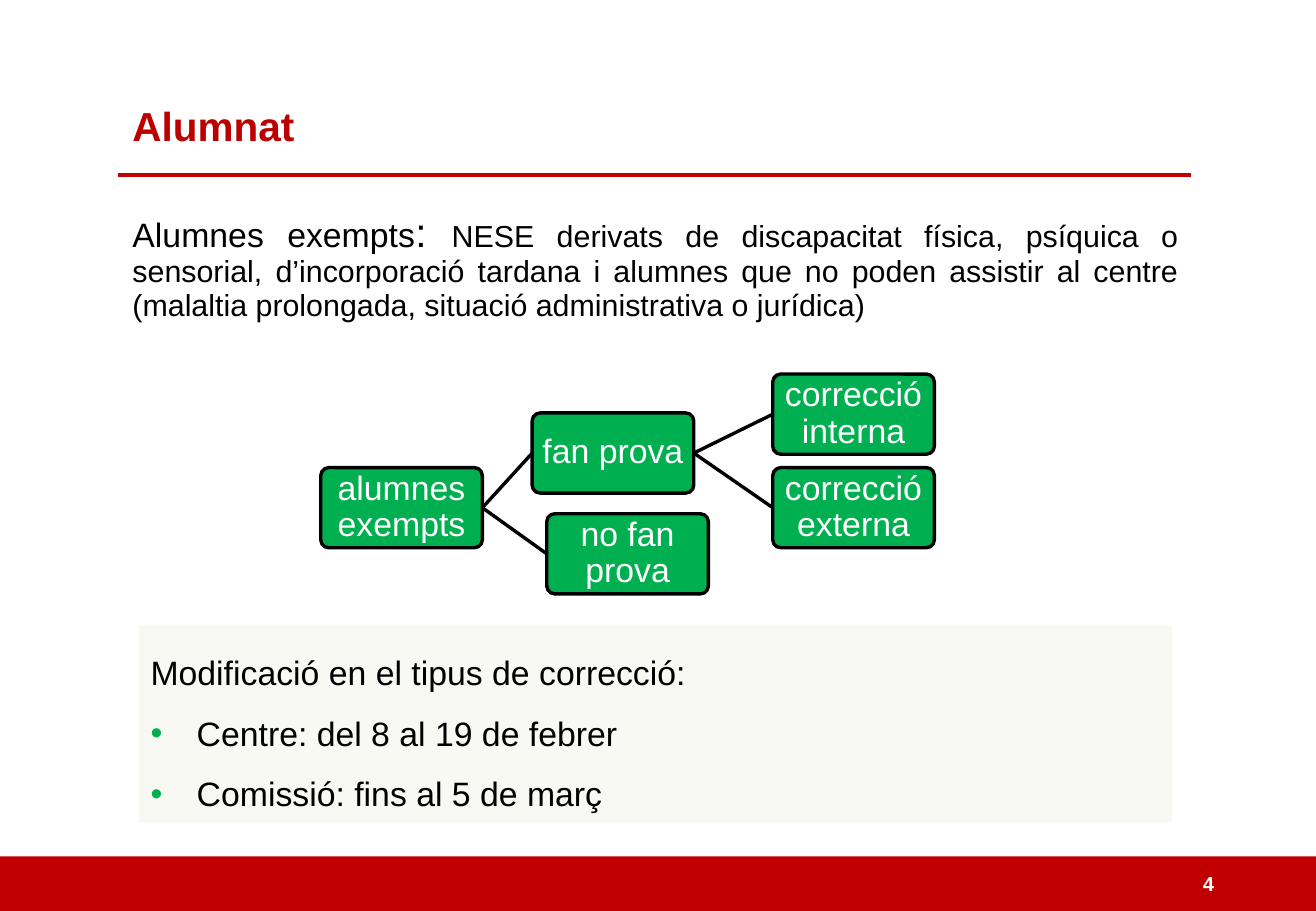
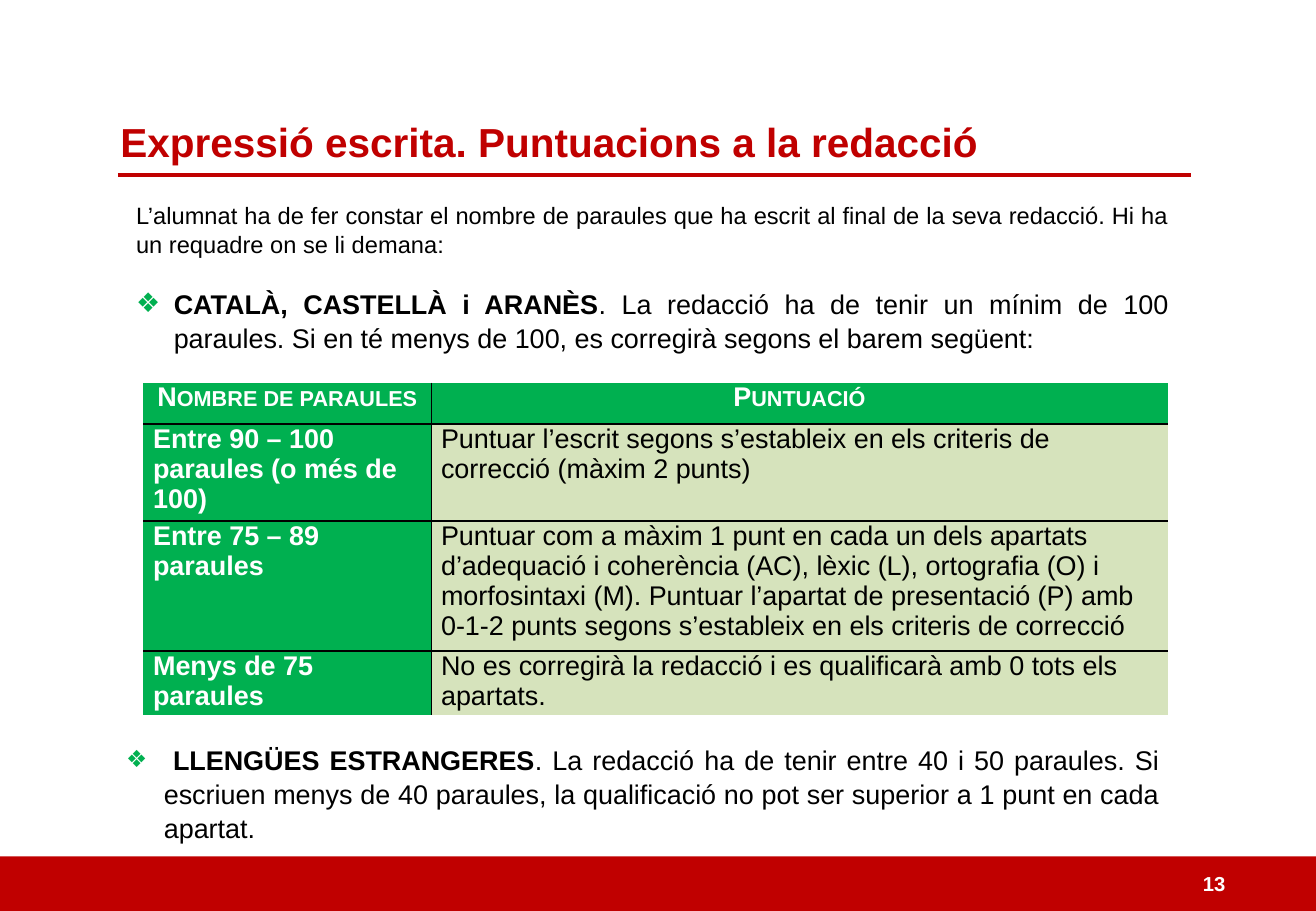
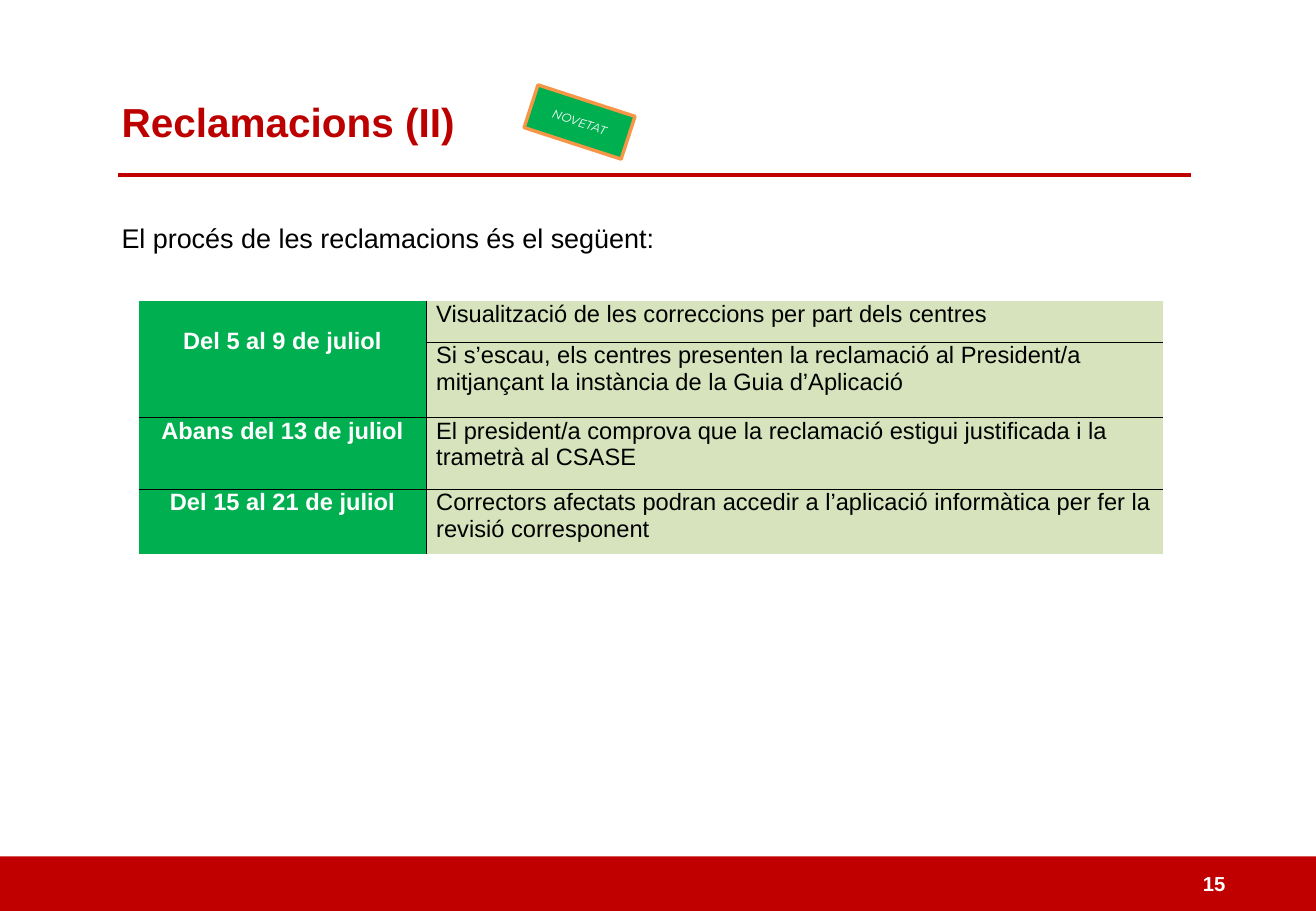
"""Build three slides on exempt pupils, essay scoring and claims."""
import pptx
import pptx.dml.color
import pptx.enum.shapes
import pptx.enum.text
import pptx.oxml.ns
import pptx.util
from lxml import etree

Inches = pptx.util.Inches
Pt = pptx.util.Pt
RGBColor = pptx.dml.color.RGBColor
ALIGN = pptx.enum.text.PP_ALIGN
ANCHOR = pptx.enum.text.MSO_ANCHOR
SHAPE = pptx.enum.shapes.MSO_SHAPE

RED = RGBColor(0xC0, 0x00, 0x00)
TITLE_RED = RGBColor(0xBC, 0x00, 0x00)
GREEN = RGBColor(0x00, 0xB0, 0x50)
PALE_GREEN = RGBColor(0xD6, 0xE3, 0xBC)
ORANGE = RGBColor(0xF7, 0x96, 0x46)
BLACK = RGBColor(0, 0, 0)
WHITE = RGBColor(255, 255, 255)
FONT = "Arial"
COLUMNS = (2.37, 6.06)


def add_xml(parent, tag, **attributes):
    """Append a DrawingML element and return it."""
    child = etree.SubElement(parent, pptx.oxml.ns.qn(tag))
    for name, value in attributes.items():
        child.set(name, str(value))
    return child


def place(box, left, top, width, height):
    """Set the position and size of a shape."""
    box.left, box.top = Inches(left), Inches(top)
    box.width, box.height = Inches(width), Inches(height)


def style_span(span, size, color=BLACK, bold=False, italic=False, font=FONT):
    """Format one run."""
    span.font.name = font
    span.font.size = Pt(size)
    span.font.color.rgb = color
    span.font.bold = bold
    span.font.italic = italic


def fill_para(para, spans, align=ALIGN.LEFT, spacing=1.0, before=0, bullet=None, indent=0.31):
    """Write (text, size, bold) spans with optional bullet."""
    para.alignment = align
    para.line_spacing = spacing
    para.space_before = Pt(before)
    properties = para._p.get_or_add_pPr()
    hang = Inches(indent) if bullet else 0
    properties.set("marL", str(hang))
    properties.set("indent", str(-hang))
    if bullet:
        add_xml(add_xml(properties, "a:buClr"), "a:srgbClr", val=GREEN)
        add_xml(properties, "a:buFont", typeface=FONT)
        add_xml(properties, "a:buChar", char=bullet)
    else:
        add_xml(properties, "a:buNone")
    for text, size, bold in spans:
        span = para.add_run()
        span.text = text
        style_span(span, size, bold=bold)


def set_frame(box, anchor=ANCHOR.TOP):
    """Give a box wrapped text of fixed size and return its frame."""
    frame = box.text_frame
    frame.word_wrap = True
    frame.auto_size = pptx.enum.text.MSO_AUTO_SIZE.NONE
    frame.vertical_anchor = anchor
    return frame


def label(box, text, size, color=WHITE, align=ALIGN.CENTER, anchor=ANCHOR.MIDDLE, **style):
    """Write a single-style label into a box."""
    frame = set_frame(box, anchor)
    frame.text = text
    frame.paragraphs[0].alignment = align
    style_span(frame.paragraphs[0].runs[0], size, color, **style)
    return frame


def add_block(page, kind, bounds, fill, line=None, weight=2):
    """Add a filled preset shape."""
    block = page.shapes.add_shape(kind, *map(Inches, bounds))
    block.shadow.inherit = False
    block.fill.solid()
    block.fill.fore_color.rgb = fill
    if line is None:
        block.line.fill.background()
    else:
        block.line.color.rgb = line
        block.line.width = Pt(weight)
    return block


def add_line(page, color, weight, start=(0, 0), end=(0, 0)):
    """Add a straight line without shadow."""
    line = page.shapes.add_connector(
        pptx.enum.shapes.MSO_CONNECTOR.STRAIGHT, *map(Inches, (*start, *end)))
    line.line.color.rgb = color
    line.line.width = Pt(weight)
    add_xml(line.element.spPr, "a:effectLst")
    return line


def build_layout(layout, page):
    """Put the bottom band and the title rule on the layout."""
    band = add_block(page, SHAPE.RECTANGLE, (0, 7.05, 10.83, 0.45), RED)
    rule = add_line(page, RED, 2.25, (0.97, 1.44), (9.8, 1.44))
    for number, item in enumerate((band, rule), 100):
        item.element.xpath(".//p:cNvPr")[0].set("id", str(number))
        layout.element.cSld.spTree.append(item.element)


def add_heading(page, text, number, bounds, color=TITLE_RED):
    """Fill the title and add the page number."""
    title = page.shapes.title
    place(title, *bounds)
    label(title, text, 24, color, ALIGN.LEFT, ANCHOR.TOP, bold=True)
    box = page.shapes.add_textbox(*map(Inches, (9.8, 7.11, 0.91, 0.33)))
    label(box, str(number), 12, align=ALIGN.LEFT, bold=True)


def body_frame(page, bounds, anchor=ANCHOR.TOP):
    """Place the body placeholder and return its frame."""
    body = page.placeholders[1]
    place(body, *bounds)
    return set_frame(body, anchor)


def add_node(page, text, left, top):
    """Add a box of the tree."""
    node = add_block(page, SHAPE.ROUNDED_RECTANGLE, (left, top, 1.33, 0.66), GREEN, BLACK)
    node.adjustments[0] = 0.1
    frame = label(node, text, 20)
    frame.margin_left = frame.margin_right = Inches(0.03)
    frame.margin_top = frame.margin_bottom = Inches(0.03)
    frame.paragraphs[0].line_spacing = 0.9
    return node


def set_borders(cell, inner):
    """Draw black lines on inner sides and none on the others."""
    properties = cell._tc.get_or_add_tcPr()
    for side in "LRTB":
        line = add_xml(properties, "a:ln" + side, w=Pt(1))
        if side in inner:
            add_xml(add_xml(line, "a:solidFill"), "a:srgbClr", val=BLACK)
        else:
            add_xml(line, "a:noFill")


def add_grid(page, left, top, heights, rows, size, first_align, header=False):
    """Add a two-column table with a green first column; None joins the cell above."""
    table = page.shapes.add_table(
        len(rows), 2, *map(Inches, (left, top, sum(COLUMNS), sum(heights)))).table
    table.first_row = table.horz_banding = False
    for column, width in zip(table.columns, COLUMNS):
        column.width = Inches(width)
    for row_index, (row, height) in enumerate(zip(rows, heights)):
        table.rows[row_index].height = Inches(height)
        for column_index, text in enumerate(row):
            cell = table.cell(row_index, column_index)
            is_header = header and row_index == 0
            is_green = is_header or column_index == 0
            inner = "L" if column_index else "R"
            inner += "T" if row_index else ""
            inner += "B" if row_index < len(rows) - 1 else ""
            set_borders(cell, inner)
            cell.fill.solid()
            cell.fill.fore_color.rgb = GREEN if is_green else PALE_GREEN
            cell.margin_left = cell.margin_right = Inches(0.08)
            cell.margin_top = cell.margin_bottom = 0
            if text is None:
                table.cell(row_index - 1, column_index).merge(cell)
                continue
            cell.text_frame.text = text
            para = cell.text_frame.paragraphs[0]
            para.alignment = (ALIGN.CENTER if is_header else
                              ALIGN.LEFT if column_index else first_align)
            style_span(para.runs[0], size, WHITE if is_green else BLACK, is_green)
            if is_header:
                para.runs[0]._r.get_or_add_rPr().set("cap", "small")
    return table


def build_pupils(page):
    """Build the slide on exempt pupils."""
    add_heading(page, "Alumnat", 4, (0.99, 0.78, 8.81, 0.61))
    frame = body_frame(page, (0.99, 1.69, 8.81, 1.03))
    fill_para(frame.paragraphs[0], [
        ("Alumnes exempts", 20, False), (": ", 24, False),
        ("NESE derivats de discapacitat física, psíquica o sensorial, d’incorporació "
         "tardana i alumnes que no poden assistir al centre (malaltia prolongada, "
         "situació administrativa o jurídica)", 18, False)], ALIGN.JUSTIFY, 0.92)

    exempt = add_node(page, "alumnes exempts", 2.64, 3.85)
    tested = add_node(page, "fan prova", 4.38, 3.4)
    untested = add_node(page, "no fan prova", 4.5, 4.23)
    internal = add_node(page, "correcció interna", 6.36, 3.08)
    external = add_node(page, "correcció externa", 6.36, 3.85)
    for parent, child in ((exempt, tested), (exempt, untested),
                          (tested, internal), (tested, external)):
        link = add_line(page, BLACK, 2)
        link.begin_connect(parent, 3)
        link.end_connect(child, 1)

    panel = add_block(page, SHAPE.RECTANGLE, (1.14, 5.15, 8.51, 1.62), PALE_GREEN)
    add_xml(panel.element.xpath("./p:spPr/a:solidFill/a:srgbClr")[0], "a:alpha", val=18000)
    frame = set_frame(panel)
    lines = (("Modificació en el tipus de correcció:", None),
             ("Centre: del 8 al 19 de febrer", "•"),
             ("Comissió: fins al 5 de març", "•"))
    for index, (text, bullet) in enumerate(lines):
        para = frame.add_paragraph() if index else frame.paragraphs[0]
        fill_para(para, [(text, 20, False)], spacing=1.5, bullet=bullet, indent=0.38)


def build_essay(page):
    """Build the slide on essay scoring."""
    add_heading(page, "Expressió escrita. Puntuacions a la redacció", 13,
                (0.89, 0.91, 7.51, 0.5), RED)
    frame = body_frame(page, (1.02, 1.6, 8.7, 1.35), ANCHOR.MIDDLE)
    fill_para(frame.paragraphs[0], [
        ("L’alumnat ha de fer constar el nombre de paraules que ha escrit al final de la "
         "seva redacció. Hi ha un requadre on se li demana:", 14, False)],
        ALIGN.JUSTIFY, 1.05)
    fill_para(frame.add_paragraph(), [
        ("CATALÀ, CASTELLÀ i ARANÈS", 16, True),
        (". La redacció ha de tenir un mínim de 100 paraules. Si en té menys de 100, es "
         "corregirà segons el barem següent:", 16, False)],
        ALIGN.JUSTIFY, 1.05, 16, "❖")
    add_grid(page, 1.18, 3.15, (0.34, 0.8, 1.07, 0.53), (
        ("Nombre de paraules", "Puntuació"),
        ("Entre 90 – 100 paraules (o més de 100)",
         "Puntuar l’escrit segons s’estableix en els criteris de correcció (màxim 2 punts)"),
        ("Entre 75 – 89 paraules",
         "Puntuar com a màxim 1 punt en cada un dels apartats d’adequació i coherència (AC), "
         "lèxic (L), ortografia (O) i morfosintaxi (M). Puntuar l’apartat de presentació (P) "
         "amb 0-1-2 punts segons s’estableix en els criteris de correcció"),
        ("Menys de 75 paraules",
         "No es corregirà la redacció i es qualificarà amb 0 tots els apartats."),
    ), 16, ALIGN.LEFT, header=True)
    box = page.shapes.add_textbox(*map(Inches, (0.94, 6.07, 8.7, 0.91)))
    fill_para(set_frame(box, ANCHOR.MIDDLE).paragraphs[0], [
        (" ", 14, False), ("LLENGÜES ESTRANGERES", 16, True),
        (". La redacció ha de tenir entre 40 i 50 paraules. Si escriuen menys de 40 "
         "paraules, la qualificació no pot ser superior a 1 punt en cada apartat.", 16, False)],
        ALIGN.JUSTIFY, 1.05, bullet="❖")


def build_claims(page):
    """Build the slide on claims."""
    add_heading(page, "Reclamacions (II)", 15, (0.9, 0.75, 5.97, 0.5))
    frame = body_frame(page, (0.9, 1.77, 8.9, 0.77))
    fill_para(frame.paragraphs[0],
              [("El procés de les reclamacions és el següent:", 16, False)])
    table = add_grid(page, 1.14, 2.48, (0.34, 0.62, 0.59, 0.53), (
        ("Del 5 al 9 de juliol", "Visualització de les correccions per part dels centres"),
        (None, "Si s’escau, els centres presenten la reclamació al President/a mitjançant la "
               "instància de la Guia d’Aplicació"),
        ("Abans del 13 de juliol", "El president/a comprova que la reclamació estigui "
                                   "justificada i la trametrà al CSASE"),
        ("Del 15 al 21 de juliol", "Correctors afectats podran accedir a l’aplicació "
                                   "informàtica per fer la revisió corresponent"),
    ), 14, ALIGN.CENTER)
    table.cell(0, 0).margin_top = Inches(0.22)
    badge = add_block(page, SHAPE.RECTANGLE, (4.35, 0.82, 0.84, 0.37), GREEN, ORANGE)
    badge.rotation = 18
    label(badge, "NOVETAT", 7, italic=True, font="Montserrat")


def main():
    """Build and save the deck."""
    deck = pptx.Presentation()
    deck.slide_width, deck.slide_height = Inches(10.83), Inches(7.5)
    layout = deck.slide_layouts[1]
    builders = (build_pupils, build_essay, build_claims)
    pages = [deck.slides.add_slide(layout) for _ in builders]
    build_layout(layout, pages[0])
    for build, page in zip(builders, pages):
        build(page)
    deck.save("out.pptx")


if __name__ == "__main__":
    main()
